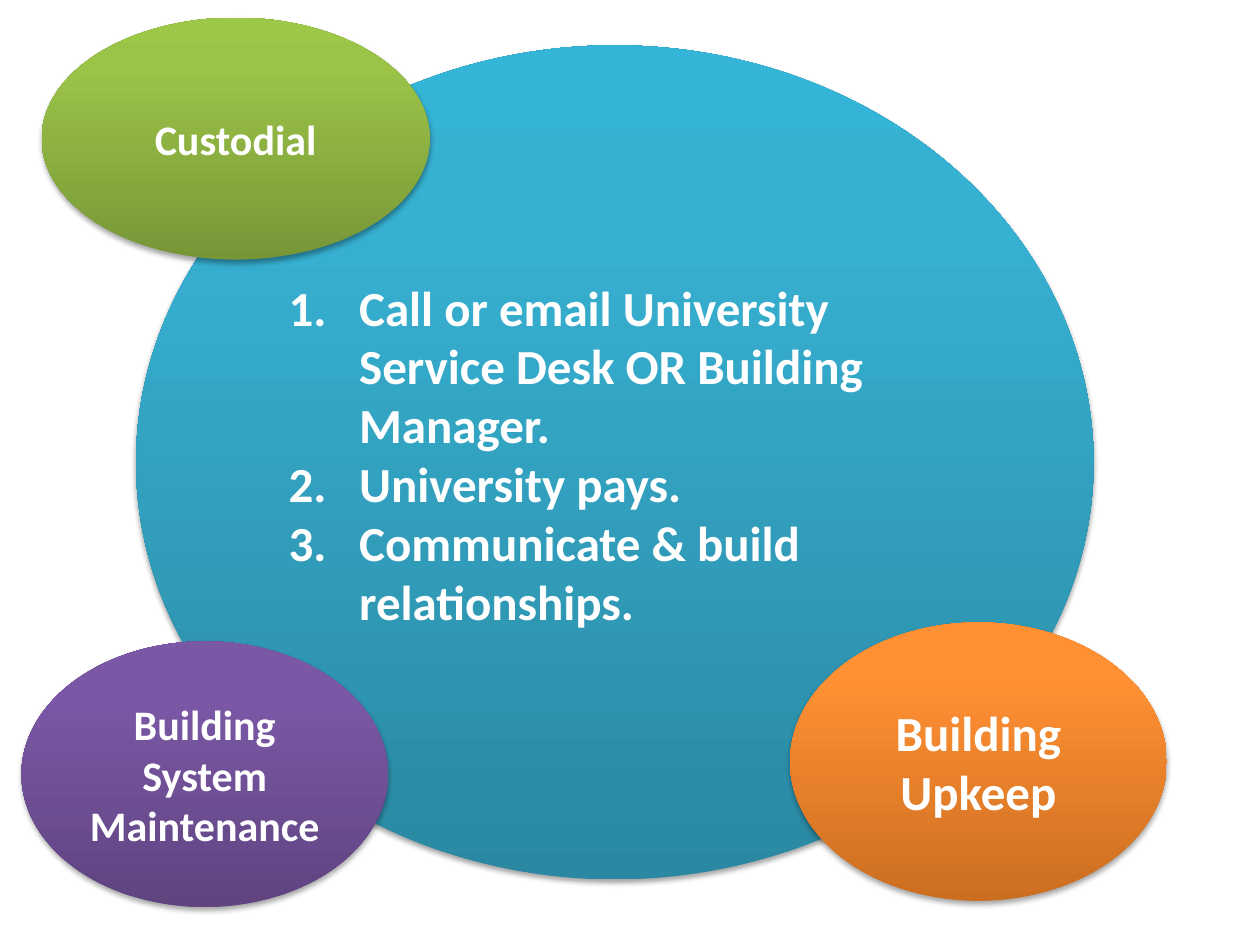
from lxml import etree
from pptx import Presentation
from pptx import util as u
from pptx.dml.color import RGBColor
from pptx.enum import shapes, text
from pptx.oxml.ns import qn

# Content: text lines, position, size and gradient name of each oval
OVALS = [
    dict(lines=["Call or email University Service Desk OR Building Manager.",
                "University pays.",
                "Communicate & build relationships."],
         at=(1.08, 0.36, 7.6, 6.62), tone="blue", size="large", numbered=True),
    dict(lines=["Custodial"],
         at=(0.33, 0.14, 3.08, 1.92), tone="green", size="small"),
    dict(lines=["Building System Maintenance"],
         at=(0.17, 5.09, 2.91, 2.11), tone="purple", size="small"),
    dict(lines=["Building Upkeep"],
         at=(6.27, 4.94, 2.99, 2.21), tone="orange", size="large"),
]

THEME = dict(
    font="Calibri",
    text=RGBColor.from_string("FFFFFF"),
    sizes=dict(small=u.Pt(24), large=u.Pt(28)),
    stops=(0, 80, 100),  # percent, from bottom to top
    tones=dict(blue=("2A88A2", "37B1D2", "34B4D6"),
               green=("779737", "9BC348", "9DC746"),
               purple=("5F4480", "7B58A6", "7C57A8"),
               orange=("CC6E20", "FF9034", "FF9136")),
    shadow=dict(blurRad=u.Pt(3.1), dist=u.Pt(1.8), dir=90 * 60000,
                algn="ctr", rotWithShape=0),
    shadow_color="000000",
    shadow_alpha=35,
)
NUMBER_INDENT = u.Inches(0.56)
LIST_BOTTOM = u.Inches(0.19)  # lifts the list slightly above the centre


def add_node(parent, tag, **attributes):
    node = etree.SubElement(parent, qn(tag))
    for name, value in attributes.items():
        node.set(name, str(value))
    return node


def paint(oval, tone):
    """Give the oval a three-stop gradient, no outline and a soft shadow."""
    oval.line.fill.background()
    oval.fill.gradient()
    oval.fill.gradient_angle = 90
    properties = oval._element.spPr
    stops = properties.find(".//" + qn("a:gsLst"))
    for stop in list(stops):
        stops.remove(stop)
    for percent, color in zip(THEME["stops"], THEME["tones"][tone]):
        stop = add_node(stops, "a:gs", pos=percent * 1000)
        add_node(stop, "a:srgbClr", val=color)

    oval.shadow.inherit = False
    effects = properties.find(qn("a:effectLst"))
    shadow = add_node(effects, "a:outerShdw", **THEME["shadow"])
    color = add_node(shadow, "a:srgbClr", val=THEME["shadow_color"])
    add_node(color, "a:alpha", val=THEME["shadow_alpha"] * 1000)


def number(para):
    para.alignment = text.PP_ALIGN.LEFT
    properties = para._p.get_or_add_pPr()
    properties.set("marL", str(NUMBER_INDENT))
    properties.set("indent", str(-NUMBER_INDENT))
    add_node(properties, "a:buFont", typeface="+mj-lt")
    add_node(properties, "a:buAutoNum", type="arabicPeriod")


def write(oval, lines, size, numbered):
    frame = oval.text_frame
    frame.word_wrap = True
    frame.vertical_anchor = text.MSO_ANCHOR.MIDDLE
    if numbered:
        frame.margin_bottom = LIST_BOTTOM
    style = dict(name=THEME["font"], size=THEME["sizes"][size], bold=True)
    for index, line in enumerate(lines):
        para = frame.add_paragraph() if index else frame.paragraphs[0]
        para.alignment = text.PP_ALIGN.CENTER
        if numbered:
            number(para)
        span = para.add_run()
        span.text = line
        for name, value in style.items():
            setattr(span.font, name, value)
        span.font.color.rgb = THEME["text"]


def main():
    deck = Presentation()
    deck.slide_width, deck.slide_height = u.Inches(10), u.Inches(7.5)
    page = deck.slides.add_slide(deck.slide_layouts[6])

    # Large oval first, the three service ovals on top of it
    for item in OVALS:
        place = [u.Inches(length) for length in item["at"]]
        oval = page.shapes.add_shape(shapes.MSO_SHAPE.OVAL, *place)
        paint(oval, item["tone"])
        write(oval, item["lines"], item["size"], item.get("numbered", False))

    deck.save("out.pptx")


if __name__ == "__main__":
    main()
